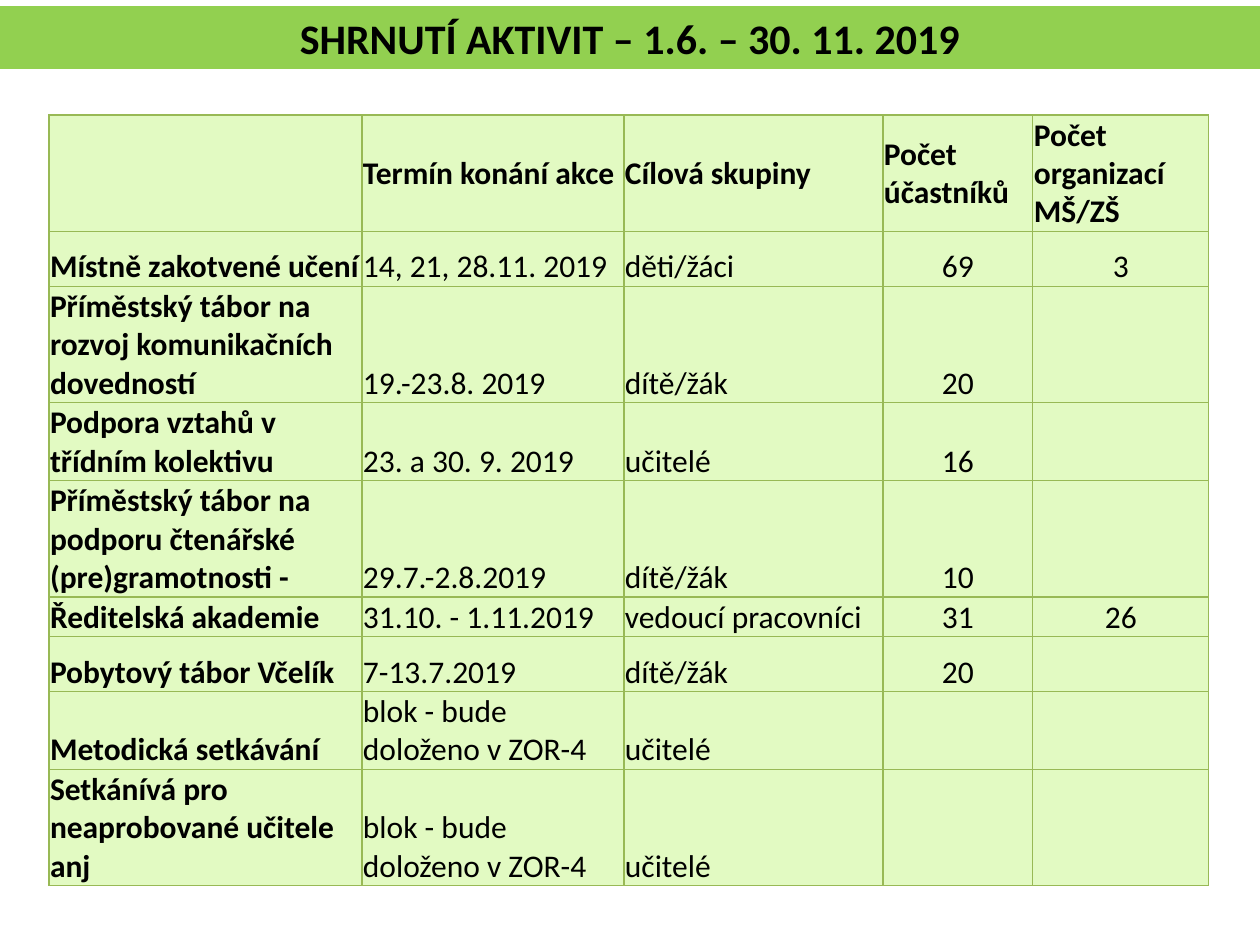
from dataclasses import dataclass

from lxml import etree
from pptx import Presentation
from pptx import util as u
from pptx.dml.color import RGBColor
from pptx.enum import text
from pptx.oxml.ns import qn


@dataclass(frozen=True)
class Theme:
    font: str = "Calibri"
    ink: str = "000000"
    banner: str = "92D050"
    cell: str = "E2FAC2"
    border: str = "98B955"
    border_pt: float = 0.75
    title_pt: int = 24
    body_pt: int = 18


COLUMNS = [313, 262, 259, 150, 176]
ROWS = [115, 55, 115, 77, 114, 39, 55, 77, 115]
ACTIVITIES = [
    ["", "Termín konání akce", "Cílová skupiny", "Počet účastníků", "Počet organizací MŠ/ZŠ"],
    ["Místně zakotvené učení", "14, 21, 28.11. 2019", "děti/žáci", "69", "3"],
    ["Příměstský tábor na rozvoj komunikačních dovedností", "19.-23.8. 2019", "dítě/žák", "20", ""],
    ["Podpora vztahů v třídním kolektivu", "23. a 30. 9. 2019", "učitelé", "16", ""],
    ["Příměstský tábor na podporu čtenářské (pre)gramotnosti -", "29.7.-2.8.2019", "dítě/žák", "10", ""],
    ["Ředitelská akademie", "31.10. - 1.11.2019", "vedoucí pracovníci", "31", "26"],
    ["Pobytový tábor Včelík", "7-13.7.2019", "dítě/žák", "20", ""],
    ["Metodická setkávání", "blok - bude doloženo v ZOR-4", "učitelé", "", ""],
    ["Setkánívá pro neaprobované učitele anj", "blok - bude doloženo v ZOR-4", "učitelé", "", ""],
]


def px(n):
    return u.Emu(round(n * u.Inches(1) / 126))


class SlideBuilder:
    def __init__(self, slide, theme):
        self.s = slide
        self.theme = theme

    def style(self, p, size, bold, align):
        p.alignment = align
        p.font.name = self.theme.font
        p.font.size = u.Pt(size)
        p.font.bold = bold
        p.font.color.rgb = RGBColor.from_string(self.theme.ink)

    def fill(self, target, color):
        target.fill.solid()
        target.fill.fore_color.rgb = RGBColor.from_string(color)

    def title(self, wording, x, y, w, h):
        sp = self.s.shapes.title
        sp.left, sp.top, sp.width, sp.height = map(px, (x, y, w, h))
        self.fill(sp, self.theme.banner)
        tf = sp.text_frame
        tf.text = wording
        tf.word_wrap = True
        tf.auto_size = text.MSO_AUTO_SIZE.NONE
        tf.vertical_anchor = text.MSO_ANCHOR.MIDDLE
        self.style(tf.paragraphs[0], self.theme.title_pt, True, text.PP_ALIGN.CENTER)

    def borders(self, cell):
        tc_pr = cell._tc.get_or_add_tcPr()
        for i, side in enumerate(("lnL", "lnR", "lnT", "lnB")):
            ln = etree.Element(qn(f"a:{side}"), w=str(u.Pt(self.theme.border_pt)))
            solid = etree.SubElement(ln, qn("a:solidFill"))
            etree.SubElement(solid, qn("a:srgbClr"), val=self.theme.border)
            tc_pr.insert(i, ln)

    def cell(self, cell, wording, anchor, bold, align):
        cell.margin_left = cell.margin_right = cell.margin_top = px(1)
        cell.margin_bottom = 0
        cell.vertical_anchor = anchor
        cell.text = wording
        self.style(cell.text_frame.paragraphs[0], self.theme.body_pt, bold, align)
        self.fill(cell, self.theme.cell)
        self.borders(cell)

    def table(self, data, x, y, columns, rows):
        frame = self.s.shapes.add_table(
            len(rows), len(columns), px(x), px(y), px(sum(columns)), px(sum(rows)))
        tbl = frame.table
        for col, width in zip(tbl.columns, columns):
            col.width = px(width)
        for row, height in zip(tbl.rows, rows):
            row.height = px(height)
        for r, values in enumerate(data):
            for c, value in enumerate(values):
                header = r == 0
                anchor = text.MSO_ANCHOR.MIDDLE if header else text.MSO_ANCHOR.BOTTOM
                number = not header and c >= 3
                align = text.PP_ALIGN.CENTER if number else text.PP_ALIGN.LEFT
                self.cell(tbl.cell(r, c), value, anchor, header or c == 0, align)


def main():
    prs = Presentation()
    prs.slide_width, prs.slide_height = px(1260), px(945)
    builder = SlideBuilder(prs.slides.add_slide(prs.slide_layouts[5]), Theme())
    builder.title("SHRNUTÍ AKTIVIT – 1.6. – 30. 11. 2019", 0, 6, 1260, 63)
    builder.table(ACTIVITIES, 49, 115, COLUMNS, ROWS)
    prs.save("out.pptx")


if __name__ == "__main__":
    main()
